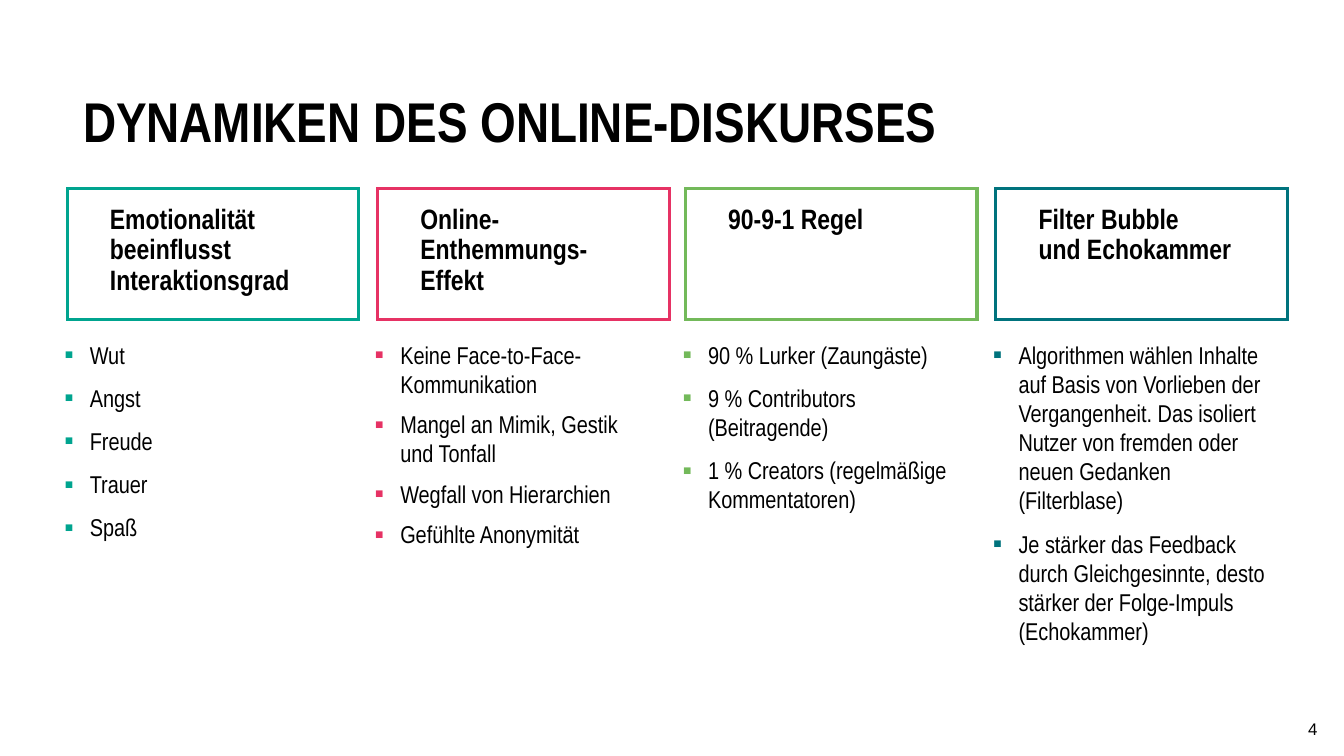
from lxml.etree import SubElement
from pptx import Presentation
from pptx.dml.color import RGBColor
from pptx.enum.shapes import MSO_SHAPE
from pptx.enum.text import MSO_ANCHOR, PP_ALIGN
from pptx.oxml.ns import qn
from pptx.util import Inches, Pt

BLACK = "000000"
# Left edge, heading paragraphs, list items, accent, space before and after items
COLUMNS = [
    (0.5, ["Emotionalität beeinflusst Interaktionsgrad"],
     ["Wut", "Angst", "Freude", "Trauer", "Spaß"], "00A48F", 7.5, 0),
    (2.81, ["Online- Enthemmungs-\vEffekt"],
     ["Keine Face-to-Face-Kommunikation", "Mangel an Mimik, Gestik und Tonfall",
      "Wegfall von Hierarchien", "Gefühlte Anonymität"], "E63264", 0, 6),
    (5.1, ["90-9-1 Regel"],
     ["90 % Lurker (Zaungäste)", "9 % Contributors (Beitragende)",
      "1 % Creators (regelmäßige Kommentatoren)"], "73B95A", 7.5, 0),
    (7.41, ["Filter Bubble", "und Echokammer"],
     ["Algorithmen wählen Inhalte auf Basis von Vorlieben der Vergangenheit. "
      "Das isoliert Nutzer von fremden oder neuen Gedanken (Filterblase)",
      "Je stärker das Feedback durch Gleichgesinnte, desto stärker der "
      "Folge-Impuls (Echokammer)"], "00737D", 7.5, 0),
]


def color(code):
    return RGBColor.from_string(code)


def add_text(slide, box, lines, size, bold=False, font="Arial Narrow",
             indent=0, hang=0, bullet=None):
    """Add a wrapped text box and return its frame."""
    frame = slide.shapes.add_textbox(*map(Inches, box)).text_frame
    frame.word_wrap = True
    for i, line in enumerate(lines):
        para = frame.paragraphs[0] if i == 0 else frame.add_paragraph()
        para.text = line
        props = para._p.get_or_add_pPr()
        props.set("marL", str(Inches(indent)))
        props.set("indent", str(Inches(hang)))
        if bullet:
            add_bullet(props, bullet)
        para.font.name = font
        para.font.size = Pt(size)
        para.font.bold = bold
        para.font.color.rgb = color(BLACK)
    return frame


def add_bullet(props, code):
    tint = SubElement(props, qn("a:buClr"))
    SubElement(tint, qn("a:srgbClr"), val=code)
    SubElement(props, qn("a:buSzPct"), val="110000")
    SubElement(props, qn("a:buFont"), typeface="Arial")
    SubElement(props, qn("a:buChar"), char="▪")


def add_title(slide, box):
    frame = add_text(slide, box, ["DYNAMIKEN DES ONLINE-DISKURSES"], 30, True)
    frame.paragraphs[0].line_spacing = Pt(38.4)


def add_column(slide, box, heading, items, accent, before, after):
    left, top, width, height = box

    # Outlined frame with sharp corners
    frame = slide.shapes.add_shape(MSO_SHAPE.RECTANGLE, *map(Inches, box))
    frame.shadow.inherit = False
    frame.fill.background()
    frame.line.color.rgb = color(accent)
    frame.line.width = Pt(1.75)
    SubElement(frame.line._get_or_add_ln(), qn("a:miter"), lim="800000")

    # Heading
    head = add_text(slide, (left + 0.02, top + 0.08, width - 0.03, 0.82),
                    heading, 15, True, indent=0.2)
    for para in head.paragraphs:
        para.line_spacing = 0.9

    # Bullet list
    body = add_text(slide, (left - 0.13, top + 1.08, width + 0.08, 2.2),
                    items, 13, indent=0.2, hang=-0.19, bullet=accent)
    for i, para in enumerate(body.paragraphs):
        para.space_before = Pt(before if i else 0)
        para.space_after = Pt(after)


def add_number(slide, box):
    frame = add_text(slide, box, ["4"], 9, font="Arial")
    frame.vertical_anchor = MSO_ANCHOR.MIDDLE
    frame.paragraphs[0].alignment = PP_ALIGN.RIGHT


def main():
    deck = Presentation()
    # Widescreen, 16 to 9
    deck.slide_width = Inches(10)
    deck.slide_height = Inches(10 * 9 / 16)
    slide = deck.slides.add_slide(deck.slide_layouts[6])

    add_title(slide, (0.52, 0.56, 7.86, 0.59))
    for left, *column in COLUMNS:
        add_column(slide, (left, 1.4, 2.17, 0.98), *column)
    add_number(slide, (9.31, 5.27, 0.59, 0.3))
    deck.save("out.pptx")


if __name__ == "__main__":
    main()
